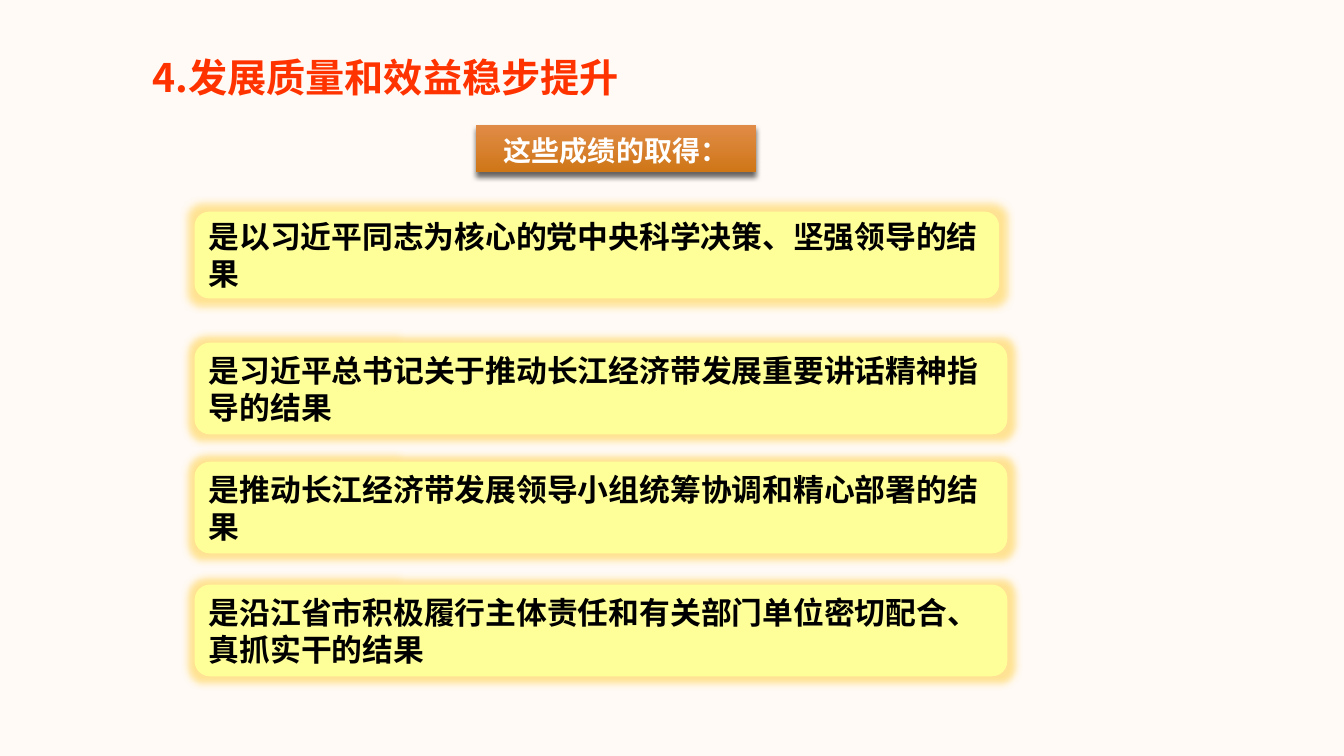
import pptx
import pptx.util
import pptx.dml.color
import pptx.enum.shapes
import pptx.enum.text
import pptx.oxml
import pptx.oxml.ns

COLORS = {
    "background": "FFFAF5",
    "title": "FF3300",
    "banner_top": "E08B47",
    "banner_bottom": "CF7617",
    "banner_text": "FFFFFF",
    "card": "FFFF99",
    "card_text": "000000",
    "glow": "FFC000",
    "shadow": "000000",
}
FONT = "Noto Sans CJK SC"
ALIGN = pptx.enum.text.PP_ALIGN
ANCHOR = pptx.enum.text.MSO_ANCHOR
SHAPE = pptx.enum.shapes.MSO_SHAPE


def color(name):
    return pptx.dml.color.RGBColor.from_string(COLORS[name])


def write(box, text, size, ink, align=ALIGN.LEFT, anchor=ANCHOR.MIDDLE, spacing=1.0):
    frame = box.text_frame
    frame.word_wrap = True
    frame.auto_size = pptx.enum.text.MSO_AUTO_SIZE.NONE
    frame.vertical_anchor = anchor
    para = frame.paragraphs[0]
    para.alignment = align
    para.line_spacing = spacing
    span = para.add_run()
    span.text = text
    span.font.size = pptx.util.Pt(size)
    span.font.bold = True
    span.font.color.rgb = color(ink)
    span.font.name = FONT
    east_asian = pptx.oxml.parse_xml(
        f'<a:ea {pptx.oxml.ns.nsdecls("a")} typeface="{FONT}"/>')
    span.font._element.append(east_asian)


class SlideBuilder:
    def __init__(self, deck):
        self.width = deck.slide_width
        self.height = deck.slide_height
        self.page = deck.slides.add_slide(deck.slide_layouts[5])
        self.page.background.fill.solid()
        self.page.background.fill.fore_color.rgb = color("background")

    def place(self, left, top, width, height):
        return (int(self.width * left / 100), int(self.height * top / 100),
                int(self.width * width / 100), int(self.height * height / 100))

    def title(self, text, *area):
        box = self.page.shapes.title
        box.left, box.top, box.width, box.height = self.place(*area)
        write(box, text, size=28, ink="title", spacing=1.5)

    def shape(self, kind, area, effect, name, alpha, **settings):
        box = self.page.shapes.add_shape(kind, *self.place(*area))
        box.line.fill.background()
        box.shadow.inherit = False
        attributes = " ".join(f'{key}="{value}"' for key, value in settings.items())
        effects = box._element.spPr.find(pptx.oxml.ns.qn("a:effectLst"))
        effects.append(pptx.oxml.parse_xml(
            f'<a:{effect} {pptx.oxml.ns.nsdecls("a")} {attributes}>'
            f'<a:srgbClr val="{COLORS[name]}"><a:alpha val="{alpha * 1000}"/>'
            f'</a:srgbClr></a:{effect}>'))
        return box

    def banner(self, text, *area):
        box = self.shape(SHAPE.RECTANGLE, area, "outerShdw", "shadow", 60,
                         blurRad=pptx.util.Pt(4), dist=pptx.util.Pt(3),
                         dir=90 * 60000, rotWithShape=0)
        box.fill.gradient()
        box.fill.gradient_angle = 270
        for stop, name in zip(box.fill.gradient_stops, ("banner_top", "banner_bottom")):
            stop.color.rgb = color(name)
        write(box, text, size=20, ink="banner_text", align=ALIGN.CENTER,
              anchor=ANCHOR.TOP, spacing=1.1)

    def card(self, text, *area):
        box = self.shape(SHAPE.ROUNDED_RECTANGLE, area, "glow", "glow", 40,
                         rad=pptx.util.Pt(11))
        box.fill.solid()
        box.fill.fore_color.rgb = color("card")
        write(box, text, size=22, ink="card_text")


def main():
    deck = pptx.Presentation()
    deck.slide_width = pptx.util.Inches(13.33)
    deck.slide_height = pptx.util.Inches(7.5)
    builder = SlideBuilder(deck)
    builder.title("4.发展质量和效益稳步提升", 10.58, 3.87, 56.94, 9.6)
    builder.banner("这些成绩的取得：", 35.41, 16.53, 20.86, 6.27)
    reasons = [
        ("是以习近平同志为核心的党中央科学决策、坚强领导的结果", 28, 59.86, 11.47),
        ("是习近平总书记关于推动长江经济带发展重要讲话精神指导的结果", 45.33, 60.47, 12.13),
        ("是推动长江经济带发展领导小组统筹协调和精心部署的结果", 61.07, 60.47, 12.13),
        ("是沿江省市积极履行主体责任和有关部门单位密切配合、真抓实干的结果", 77.33, 60.47, 12.13),
    ]
    for text, top, width, height in reasons:
        builder.card(text, 14.48, top, width, height)
    deck.save("out.pptx")


if __name__ == "__main__":
    main()
